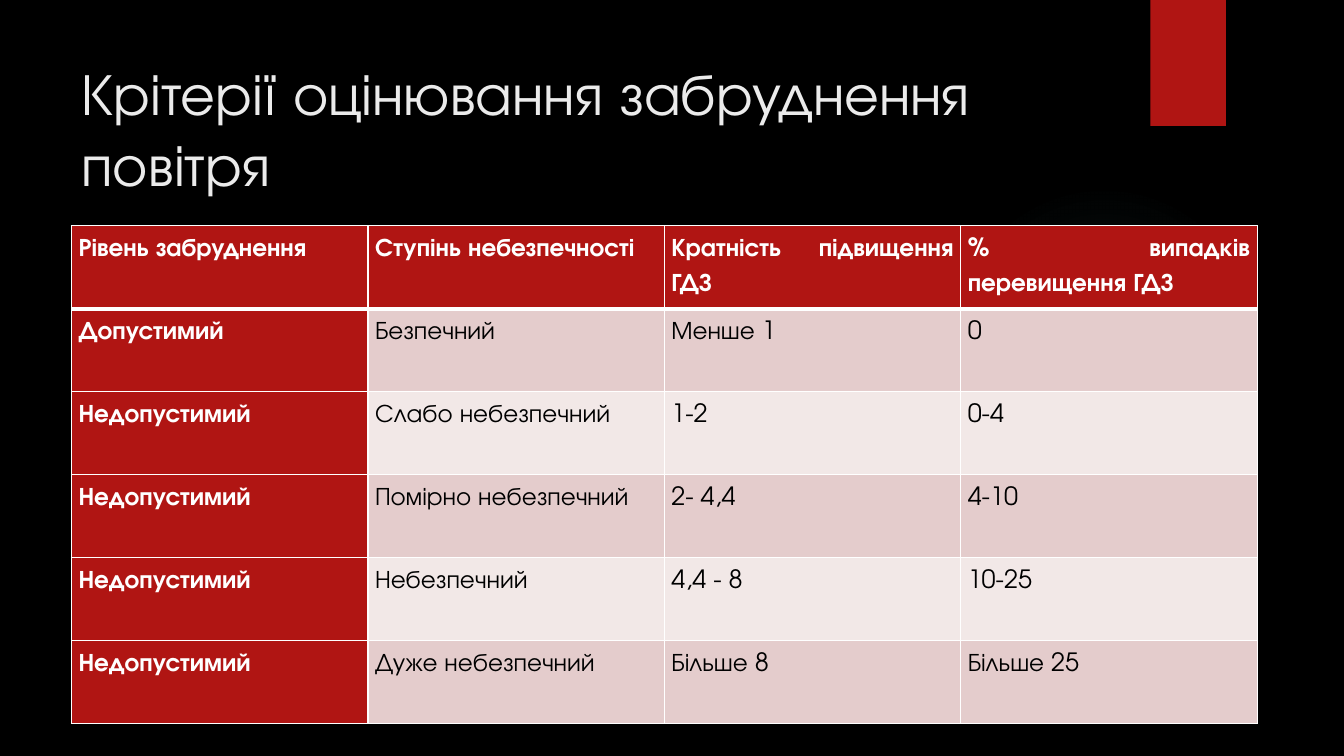
from lxml import etree
from pptx import Presentation
from pptx.dml.color import RGBColor
from pptx.enum.shapes import MSO_SHAPE
from pptx.enum.text import MSO_ANCHOR, PP_ALIGN
from pptx.oxml import parse_xml
from pptx.oxml.ns import qn
from pptx.util import Inches, Pt

RECTANGLE, OVAL = MSO_SHAPE.RECTANGLE, MSO_SHAPE.OVAL
LEFT, JUSTIFY = PP_ALIGN.LEFT, PP_ALIGN.JUSTIFY
MIDDLE, TOP = MSO_ANCHOR.MIDDLE, MSO_ANCHOR.TOP
TITLE_ONLY = 5
FONT = "TeX Gyre Adventor"
COLORS = {
    "background": "000000", "title": "EBEBEB", "accent": "B01513",
    "glow": "50B9C1", "odd_row": "E4CCCC", "even_row": "F2E8E7",
    "light": "FFFFFF", "dark": "000000",
}
GLOW_STOPS = [(0, 7), (36, 6), (69, 0)]  # position and opacity, percent
CELL_MARGINS = {"margin_left": Inches(0.07), "margin_right": Inches(0.07),
                "margin_top": 0, "margin_bottom": 0, "vertical_anchor": TOP}
CELL_PARAGRAPH = {"alignment": JUSTIFY, "line_spacing": 1.5, "space_after": Pt(10)}
ROWS = [
    ["Рівень забруднення", "Ступінь небезпечності",
     "Кратність підвищення ГДЗ", "% випадків перевищення ГДЗ"],
    ["Допустимий", "Безпечний", "Менше 1", "0"],
    ["Недопустимий", "Слабо небезпечний ", "1-2", "0-4"],
    ["Недопустимий", "Помірно небезпечний", "2- 4,4", "4-10"],
    ["Недопустимий", "Небезпечний", "4,4 - 8", "10-25"],
    ["Недопустимий", "Дуже небезпечний", "Більше 8 ", "Більше 25"],
]


def rgb(name):
    return RGBColor.from_string(COLORS[name])


def set_attributes(target, values):
    for name, value in values.items():
        setattr(target, name, value)


def format_font(font, size, color, bold=False):
    set_attributes(font, {"name": FONT, "size": Pt(size), "bold": bold})
    font.color.rgb = rgb(color)


def add_plain_shape(slide, kind, left, top, width, height, color):
    shape = slide.shapes.add_shape(
        kind, Inches(left), Inches(top), Inches(width), Inches(height))
    shape.shadow.inherit = False
    shape.fill.solid()
    shape.fill.fore_color.rgb = rgb(color)
    shape.line.fill.background()
    return shape


def add_glow(slide):
    """Add a faint circle that fades out from its centre."""
    glow = add_plain_shape(slide, OVAL, 9.41, 1.83, 3.08, 3.08, "glow")
    stops = "".join(
        f'<a:gs pos="{position * 1000}"><a:srgbClr val="{COLORS["glow"]}">'
        f'<a:alpha val="{opacity * 1000}"/></a:srgbClr></a:gs>'
        for position, opacity in GLOW_STOPS)
    gradient = parse_xml(
        '<a:gradFill xmlns:a="http://schemas.openxmlformats.org/drawingml/2006/main">'
        f'<a:gsLst>{stops}</a:gsLst><a:path path="circle">'
        '<a:fillToRect l="50000" t="50000" r="50000" b="50000"/></a:path></a:gradFill>')
    properties = glow.element.spPr
    properties.replace(properties.find(qn("a:solidFill")), gradient)


def add_ribbon(slide):
    """Add the red tab at the top edge with its soft shadow."""
    ribbon = add_plain_shape(slide, RECTANGLE, 11.41, 0, 0.75, 1.25, "accent")
    effects = ribbon.element.spPr.find(qn("a:effectLst"))
    shadow = etree.SubElement(effects, qn("a:outerShdw"), blurRad=str(Pt(3)),
                              dist=str(Pt(2)), dir="5400000", rotWithShape="0")
    color = etree.SubElement(shadow, qn("a:srgbClr"), val=COLORS["dark"])
    etree.SubElement(color, qn("a:alpha"), val="45000")


def set_title(slide, text):
    title = slide.shapes.title
    set_attributes(title, {"left": Inches(0.71), "top": Inches(0.5),
                           "width": Inches(10.29), "height": Inches(1.53)})
    set_attributes(title.text_frame, {"word_wrap": True, "vertical_anchor": MIDDLE})
    title.text_frame.text = text
    paragraph = title.text_frame.paragraphs[0]
    set_attributes(paragraph, {"alignment": LEFT, "line_spacing": 1.0})
    format_font(paragraph.runs[0].font, 42, "title")


def set_borders(cell, widths):
    """Draw light cell borders; widths maps a side (L, R, T, B) to points."""
    properties = cell._tc.get_or_add_tcPr()
    for side, width in widths.items():
        line = etree.SubElement(properties, qn(f"a:ln{side}"), w=str(Pt(width)))
        fill = etree.SubElement(line, qn("a:solidFill"))
        etree.SubElement(fill, qn("a:srgbClr"), val=COLORS["light"])


def format_cell(cell, text, row, column):
    heading = row == 0 or column == 0
    band = "odd_row" if row % 2 else "even_row"
    set_borders(cell, {"L": 1, "R": 1, "T": 3 if row == 1 else 1,
                       "B": 3 if row == 0 else 1})
    cell.fill.solid()
    cell.fill.fore_color.rgb = rgb("accent" if heading else band)
    set_attributes(cell, CELL_MARGINS)
    cell.text = text
    paragraph = cell.text_frame.paragraphs[0]
    set_attributes(paragraph, CELL_PARAGRAPH)
    format_font(paragraph.runs[0].font, 18, "light" if heading else "dark", heading)


def add_criteria_table(slide):
    frame = slide.shapes.add_table(
        len(ROWS), len(ROWS[0]), Inches(0.71), Inches(2.24), Inches(11.76), Inches(4.94))
    frame.table.first_col = True
    for row, texts in enumerate(ROWS):
        for column, text in enumerate(texts):
            format_cell(frame.table.cell(row, column), text, row, column)


def main():
    presentation = Presentation()
    presentation.slide_width = Inches(13.33)
    presentation.slide_height = Inches(7.5)
    slide = presentation.slides.add_slide(presentation.slide_layouts[TITLE_ONLY])
    slide.background.fill.solid()
    slide.background.fill.fore_color.rgb = rgb("background")
    add_glow(slide)
    add_ribbon(slide)
    set_title(slide, "Крітерії оцінювання забруднення повітря")
    add_criteria_table(slide)
    presentation.save("out.pptx")


if __name__ == "__main__":
    main()
